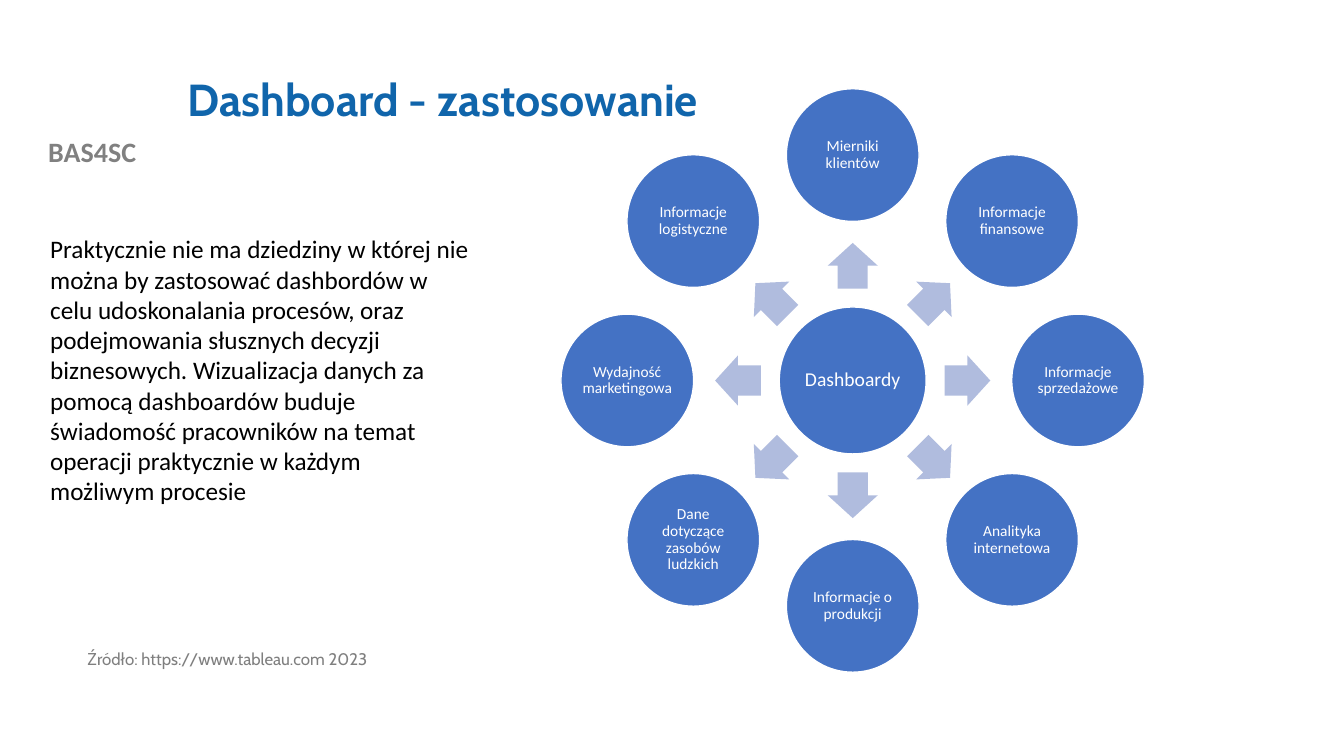
"""Build the slide about uses of dashboards, with a radial diagram."""
from dataclasses import dataclass
from math import cos, radians, sin

from pptx import Presentation
from pptx.dml.color import RGBColor
from pptx.enum.shapes import MSO_SHAPE
from pptx.enum.text import MSO_ANCHOR, MSO_AUTO_SIZE, PP_ALIGN
from pptx.util import Pt

COLORS = {
    "title": "1065AB",
    "label": "808080",
    "source": "7F7F7F",
    "body": "000000",
    "circle": "4472C4",
    "arrow": "B0BCDE",
    "white": "FFFFFF",
}
CENTER_X, CENTER_Y = 609.1, 271.8
TOPIC_RADIUS, ARROW_RADIUS = 161, 82
HUB_SIZE, TOPIC_SIZE = 105, 94.8
ARROW_LENGTH, ARROW_WIDTH = 32.6, 35.8
TOPICS = [
    "Mierniki klientów",
    "Informacje finansowe",
    "Informacje sprzedażowe",
    "Analityka internetowa",
    "Informacje o produkcji",
    "Dane dotyczące zasobów ludzkich",
    "Wydajność marketingowa",
    "Informacje logistyczne",
]


@dataclass
class TextStyle:
    """Look of a one-paragraph text."""

    font: str
    size: float
    color: str
    bold: bool = False
    align: PP_ALIGN = PP_ALIGN.LEFT
    line_spacing: float = 1.0


@dataclass
class Label:
    """Text box with its place in points."""

    text: str
    left: float
    top: float
    width: float
    height: float
    style: TextStyle


LABELS = [
    Label("BAS4SC", 0, 92.2, 131.8, 31.7,
          TextStyle("Calibri", 20, "label", True, PP_ALIGN.CENTER)),
    Label("Źródło: https://www.tableau.com 2023", 55.4, 461.5, 360.7, 37.4,
          TextStyle("Cabin", 12, "source", line_spacing=0.9)),
    Label("Praktycznie nie ma dziedziny w której nie można by zastosować "
          "dashbordów w celu udoskonalania procesów, oraz podejmowania "
          "słusznych decyzji biznesowych. Wizualizacja danych za pomocą "
          "dashboardów buduje świadomość pracowników na temat operacji "
          "praktycznie w każdym możliwym procesie", 28.8, 163.4, 313.9, 203.8,
          TextStyle("Calibri", 18, "body")),
]


def write(text_frame, text: str, style: TextStyle) -> None:
    """Put one styled paragraph in a text frame."""
    text_frame.text = text
    text_frame.word_wrap = True
    paragraph = text_frame.paragraphs[0]
    paragraph.alignment = style.align
    paragraph.line_spacing = style.line_spacing
    paragraph.font.name = style.font
    paragraph.font.size = Pt(style.size)
    paragraph.font.bold = style.bold
    paragraph.font.color.rgb = RGBColor.from_string(COLORS[style.color])


def add_centered(slide, kind: MSO_SHAPE, x: float, y: float, width: float,
                 height: float, color: str):
    """Add a filled shape around a center point."""
    shape = slide.shapes.add_shape(kind, Pt(x - width / 2), Pt(y - height / 2),
                                   Pt(width), Pt(height))
    shape.shadow.inherit = False
    shape.fill.solid()
    shape.fill.fore_color.rgb = RGBColor.from_string(COLORS[color])
    return shape


def add_circle(slide, x: float, y: float, diameter: float, text: str,
               size: float) -> None:
    """Add a captioned circle of the diagram."""
    circle = add_centered(slide, MSO_SHAPE.OVAL, x, y, diameter, diameter, "circle")
    circle.line.color.rgb = RGBColor.from_string(COLORS["white"])
    circle.line.width = Pt(1)
    frame = circle.text_frame
    frame.margin_left = frame.margin_right = Pt(1.4)
    frame.margin_top = frame.margin_bottom = Pt(1.4)
    frame.vertical_anchor = MSO_ANCHOR.MIDDLE
    write(frame, text, TextStyle("Calibri", size, "white",
                                 align=PP_ALIGN.CENTER, line_spacing=0.9))


def add_arrow(slide, x: float, y: float, rotation: float) -> None:
    """Add an arrow that points away from the hub."""
    arrow = add_centered(slide, MSO_SHAPE.RIGHT_ARROW, x, y,
                         ARROW_LENGTH, ARROW_WIDTH, "arrow")
    arrow.line.fill.background()
    arrow.adjustments[0] = 0.6
    arrow.adjustments[1] = 0.5
    arrow.rotation = rotation


def add_diagram(slide) -> None:
    """Draw the hub and its ring of topics, clockwise from the top."""
    add_circle(slide, CENTER_X, CENTER_Y, HUB_SIZE, "Dashboardy", 14)
    for index, topic in enumerate(TOPICS):
        degrees = (270 + index * 360 / len(TOPICS)) % 360
        across, down = cos(radians(degrees)), sin(radians(degrees))
        add_arrow(slide, CENTER_X + ARROW_RADIUS * across,
                  CENTER_Y + ARROW_RADIUS * down, degrees)
        add_circle(slide, CENTER_X + TOPIC_RADIUS * across,
                   CENTER_Y + TOPIC_RADIUS * down, TOPIC_SIZE, topic, 11)


def add_title(slide) -> None:
    """Place and fill the title."""
    title = slide.shapes.title
    title.left, title.top = Pt(126.7), Pt(28.8)
    title.width, title.height = Pt(767.5), Pt(87.8)
    title.text_frame.auto_size = MSO_AUTO_SIZE.NONE
    title.text_frame.vertical_anchor = MSO_ANCHOR.MIDDLE
    write(title.text_frame, "Dashboard - zastosowanie",
          TextStyle("Cabin", 32, "title", True, line_spacing=0.9))


def add_label(slide, label: Label) -> None:
    """Add a text box."""
    box = slide.shapes.add_textbox(Pt(label.left), Pt(label.top),
                                   Pt(label.width), Pt(label.height))
    write(box.text_frame, label.text, label.style)


def main() -> None:
    """Build and save the presentation."""
    presentation = Presentation()
    presentation.slide_width, presentation.slide_height = Pt(960), Pt(540)
    slide = presentation.slides.add_slide(presentation.slide_layouts[5])
    add_title(slide)
    for label in LABELS:
        add_label(slide, label)
    add_diagram(slide)
    presentation.save("out.pptx")


if __name__ == "__main__":
    main()
